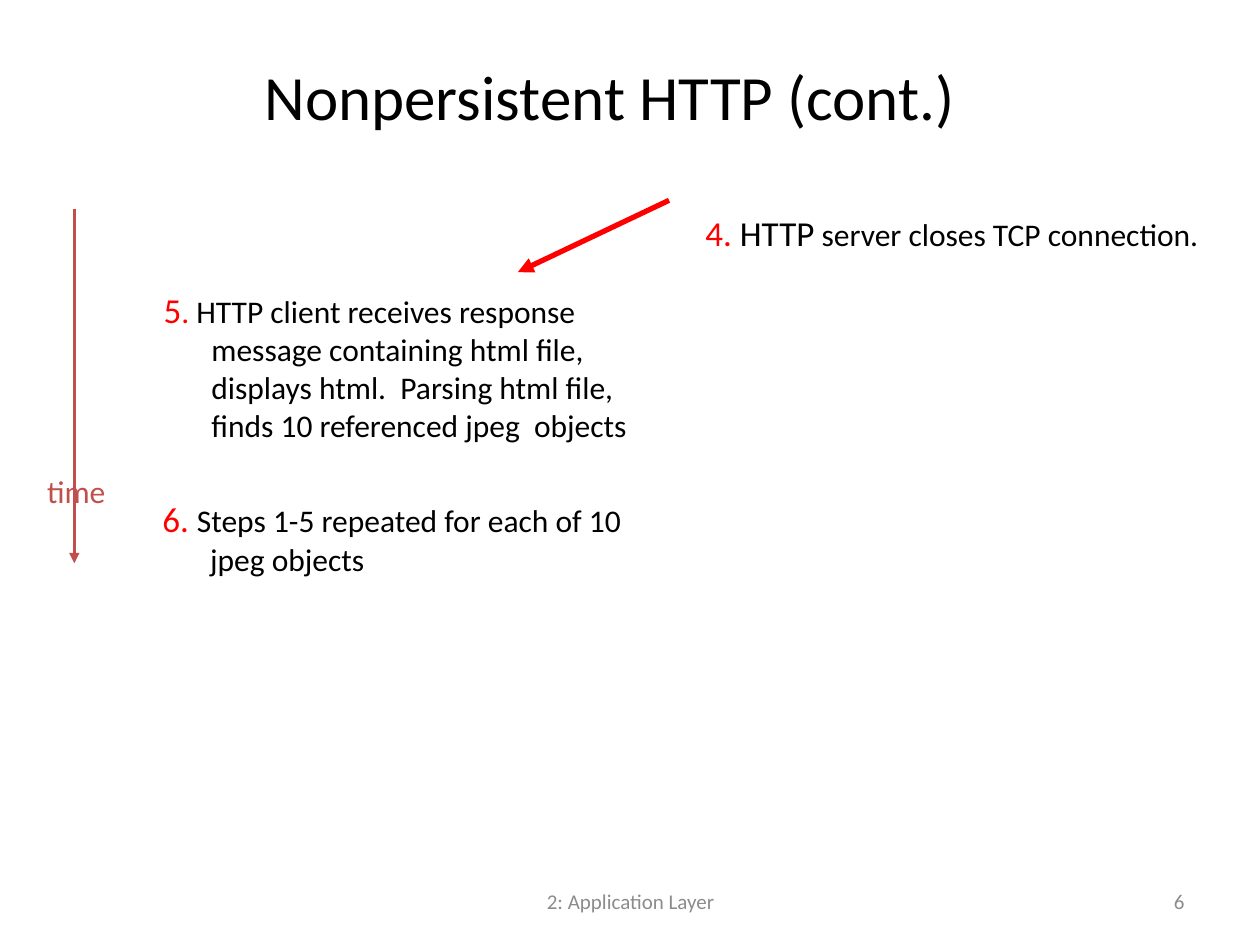
from lxml.etree import SubElement
from pptx import Presentation
from pptx.dml.color import RGBColor
from pptx.enum.shapes import MSO_CONNECTOR as Connector
from pptx.enum.text import MSO_ANCHOR as Anchor, PP_ALIGN as Align
from pptx.oxml.ns import qn
from pptx.util import Inches, Pt

WIDTH, HEIGHT = 10, 7.5
FONT = "Calibri"
BLACK, RED, BRICK, GREY = "000000", "FF0000", "C0504D", "8C8C8C"
HANGING = Inches(0.38)
STEP_WIDTH = 4.17
FOOTER_TOP, FOOTER_HEIGHT = 6.95, 0.4

TITLE = ("Nonpersistent HTTP (cont.)", 36, BLACK)
TITLE_AREA = (0.59, 0.28, 8.5, 0.95)

STEPS = [
    ((5.5, 1.63, STEP_WIDTH, 0.8), [
        ("4.", 20, RED),
        (" HTTP", 20, BLACK),
        (" server closes TCP connection.", 18, BLACK),
    ]),
    ((1.2, 2.24, STEP_WIDTH, 1.68), [
        ("5", 20, RED),
        (".", 18, RED),
        (" HTTP client receives response message containing html file, "
         "displays html.  Parsing html file, finds 10 referenced jpeg  objects", 18, BLACK),
    ]),
    ((1.19, 3.9, STEP_WIDTH, 0.73), [
        ("6. ", 20, RED),
        ("Steps 1-5 repeated for each of 10 jpeg objects", 18, BLACK),
    ]),
]

LABELS = [
    ((3.42, FOOTER_TOP, 3.17, FOOTER_HEIGHT), ("2: Application Layer", 12, GREY), Align.CENTER, Anchor.MIDDLE),
    ((7.17, FOOTER_TOP, 2.33, FOOTER_HEIGHT), ("6", 12, GREY), Align.RIGHT, Anchor.MIDDLE),
    ((0.16, 3.7, 0.89, 0.5), ("time", 18, BRICK), Align.CENTER, Anchor.TOP),
]

ARROWS = [
    ((0.59, 1.66), (0.59, 4.47), BRICK, 1.5),
    ((5.31, 1.59), (4.11, 2.16), RED, 3),
]


def color(value):
    return RGBColor.from_string(value)


def write(box, spans, align=Align.LEFT, anchor=Anchor.TOP):
    frame = box.text_frame
    frame.word_wrap = True
    frame.vertical_anchor = anchor
    para = frame.paragraphs[0]
    para.alignment = align
    for text, size, fill in spans:
        span = para.add_run()
        span.text = text
        for name, value in {"name": FONT, "size": Pt(size)}.items():
            setattr(span.font, name, value)
        span.font.color.rgb = color(fill)
    return para


def add_box(page, area):
    return page.shapes.add_textbox(*map(Inches, area))


def add_title(page):
    box = page.shapes.title
    for name, value in zip(("left", "top", "width", "height"), TITLE_AREA):
        setattr(box, name, Inches(value))
    write(box, [TITLE], Align.CENTER, Anchor.MIDDLE)


def add_step(page, area, spans):
    properties = write(add_box(page, area), spans)._p.get_or_add_pPr()
    properties.set("marL", str(HANGING))
    properties.set("indent", str(-HANGING))


def add_arrow(page, start, end, stroke, weight):
    arrow = page.shapes.add_connector(Connector.STRAIGHT, *map(Inches, start + end))
    arrow.line.color.rgb = color(stroke)
    arrow.line.width = Pt(weight)
    SubElement(arrow.line._get_or_add_ln(), qn("a:tailEnd"), type="triangle")
    SubElement(arrow._element.spPr, qn("a:effectLst"))


def main():
    deck = Presentation()
    deck.slide_width, deck.slide_height = Inches(WIDTH), Inches(HEIGHT)
    page = deck.slides.add_slide(deck.slide_layouts[5])
    add_title(page)
    for area, spans in STEPS:
        add_step(page, area, spans)
    for arrow in ARROWS:
        add_arrow(page, *arrow)
    for area, span, align, anchor in LABELS:
        write(add_box(page, area), [span], align, anchor)
    deck.save("out.pptx")


if __name__ == "__main__":
    main()
